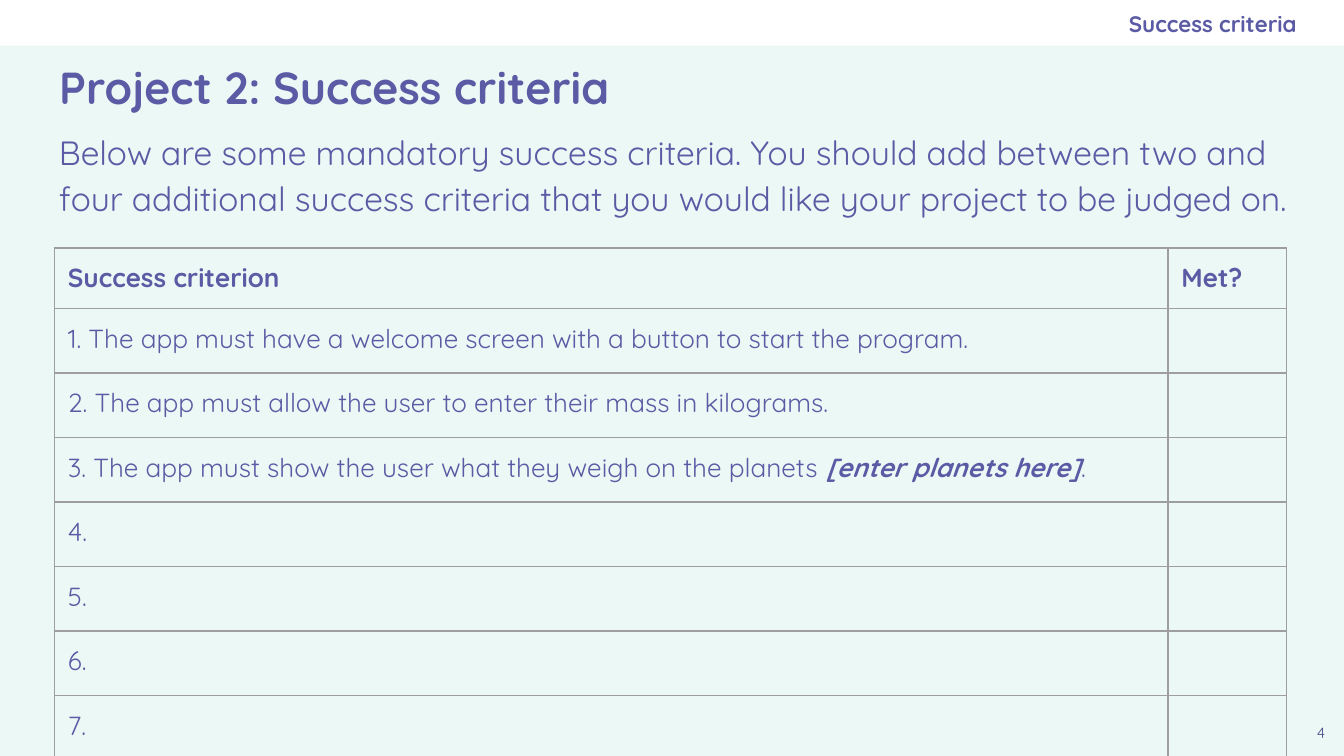
from dataclasses import dataclass

from lxml.etree import SubElement
from pptx import Presentation
from pptx.dml.color import RGBColor
from pptx.enum.shapes import MSO_SHAPE
from pptx.enum.text import MSO_ANCHOR as Anchor, MSO_AUTO_SIZE as AutoSize, PP_ALIGN as Align
from pptx.oxml.ns import qn
from pptx.util import Emu, Pt

EMU_PER_PX = 4572
SLIDE_WIDTH = 2000
SLIDE_HEIGHT = 1125
FONT = "Quicksand"
PURPLE = "5B5BA5"
DARK_PURPLE = "494985"
MINT = "ECF8F5"
WHITE = "FFFFFF"
GREY = "9E9E9E"
INSET = 20
HEADER_HEIGHT = 90
ROW_HEIGHT = 96
COLUMN_WIDTHS = (1657, 176)


@dataclass(frozen=True)
class Box:
    left: int
    top: int
    width: int
    height: int


@dataclass(frozen=True)
class Run:
    text: str
    size: int
    color: str = PURPLE
    bold: bool = False
    italic: bool = False


@dataclass(frozen=True)
class Label:
    box: Box
    run: Run
    align: Align = Align.LEFT
    anchor: Anchor = Anchor.TOP
    inset_right: int = INSET
    line_spacing: float = 1.0


TITLE = Label(Box(68, 53, 1864, 152), Run("Project 2: Success criteria", 24, bold=True), anchor=Anchor.MIDDLE)
LABELS = (
    Label(Box(1932, 1057, 68, 68), Run("4", 8, DARK_PURPLE), Align.CENTER),
    Label(
        Box(68, 167, 1878, 152),
        Run(
            "Below are some mandatory success criteria. You should add between two and "
            "four additional success criteria that you would like your project to be judged on.",
            18,
        ),
        line_spacing=1.15,
    ),
    Label(Box(1150, 1, 780, 68), Run("Success criteria", 12, bold=True), Align.RIGHT, Anchor.MIDDLE, 0),
)
CRITERIA = (
    (Run("1. The app must have a welcome screen with a button to start the program.", 14),),
    (Run("2. The app must allow the user to enter their mass in kilograms.", 14),),
    (
        Run("3. The app must show the user what they weigh on the planets ", 14),
        Run("[enter planets here]", 14, bold=True, italic=True),
        Run(".", 14),
    ),
    *((Run(f"{number}.", 14),) for number in range(4, 8)),
)
ROWS = (
    ((Run("Success criterion", 14, bold=True),), (Run("Met?", 14, bold=True),)),
    *((criterion, ()) for criterion in CRITERIA),
)


def px(length: int) -> Emu:
    return Emu(length * EMU_PER_PX)


def rgb(color: str) -> RGBColor:
    return RGBColor.from_string(color)


def place(box: Box) -> tuple[Emu, Emu, Emu, Emu]:
    return px(box.left), px(box.top), px(box.width), px(box.height)


def add_run(paragraph, item: Run) -> None:
    run = paragraph.add_run()
    run.text = item.text
    font = run.font
    font.name = FONT
    font.size = Pt(item.size)
    font.bold = item.bold
    font.italic = item.italic
    font.color.rgb = rgb(item.color)


def fill_label(shape, label: Label) -> None:
    shape.left, shape.top, shape.width, shape.height = place(label.box)
    frame = shape.text_frame
    frame.word_wrap = True
    frame.auto_size = AutoSize.NONE
    frame.vertical_anchor = label.anchor
    frame.margin_left = frame.margin_top = frame.margin_bottom = px(INSET)
    frame.margin_right = px(label.inset_right)
    paragraph = frame.paragraphs[0]
    paragraph.alignment = label.align
    paragraph.line_spacing = label.line_spacing
    add_run(paragraph, label.run)


def add_band(slide, box: Box, color: str) -> None:
    shape = slide.shapes.add_shape(MSO_SHAPE.RECTANGLE, *place(box))
    shape.shadow.inherit = False
    shape.fill.solid()
    shape.fill.fore_color.rgb = rgb(color)
    shape.line.fill.background()


def add_borders(cell, color: str) -> None:
    properties = cell._tc.get_or_add_tcPr()
    for side in ("a:lnL", "a:lnR", "a:lnT", "a:lnB"):
        line = SubElement(properties, qn(side), w=str(Pt(0.75)))
        fill = SubElement(line, qn("a:solidFill"))
        SubElement(fill, qn("a:srgbClr"), val=color)


def fill_cell(cell, runs: tuple[Run, ...]) -> None:
    add_borders(cell, GREY)
    cell.fill.background()
    cell.margin_left = cell.margin_right = px(INSET)
    cell.margin_top = cell.margin_bottom = px(INSET if runs else 0)
    for item in runs:
        add_run(cell.text_frame.paragraphs[0], item)


def add_criteria_table(slide, left: int, top: int) -> None:
    heights = [HEADER_HEIGHT] + [ROW_HEIGHT] * len(CRITERIA)
    box = Box(left, top, sum(COLUMN_WIDTHS), sum(heights))
    table = slide.shapes.add_table(len(ROWS), len(COLUMN_WIDTHS), *place(box)).table
    table.first_row = False
    table.horz_banding = False
    for column, width in zip(table.columns, COLUMN_WIDTHS):
        column.width = px(width)
    for row, height, contents in zip(table.rows, heights, ROWS):
        row.height = px(height)
        for cell, runs in zip(row.cells, contents):
            fill_cell(cell, runs)


def main() -> None:
    presentation = Presentation()
    presentation.slide_width, presentation.slide_height = px(SLIDE_WIDTH), px(SLIDE_HEIGHT)
    slide = presentation.slides.add_slide(presentation.slide_layouts.get_by_name("Title Only"))
    slide.background.fill.solid()
    slide.background.fill.fore_color.rgb = rgb(MINT)
    add_band(slide, Box(0, 0, SLIDE_WIDTH, 68), WHITE)
    fill_label(slide.shapes.title, TITLE)
    for label in LABELS:
        fill_label(slide.shapes.add_textbox(*place(label.box)), label)
    add_criteria_table(slide, 81, 369)
    presentation.save("out.pptx")


if __name__ == "__main__":
    main()
